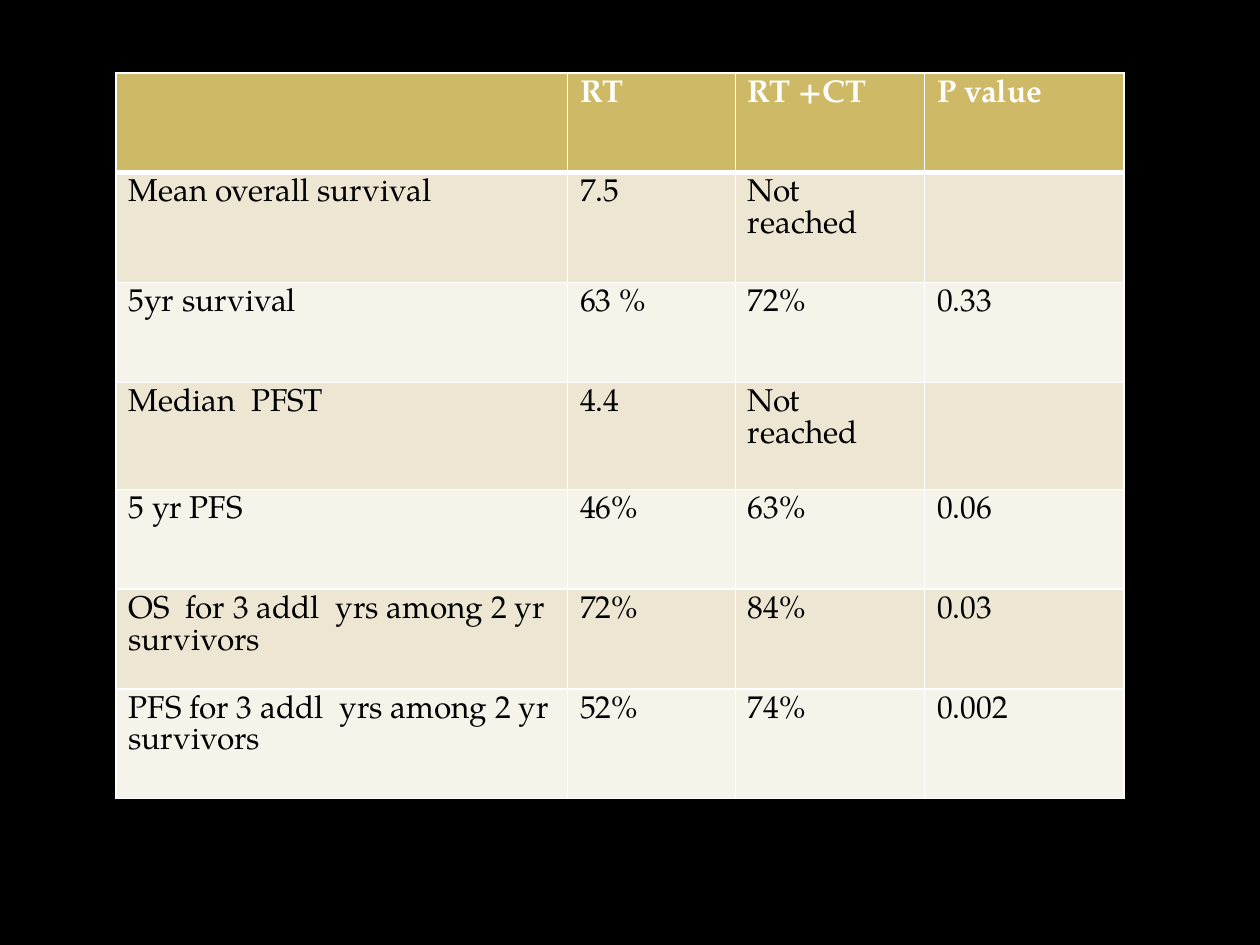
from lxml.etree import SubElement
from pptx import Presentation
from pptx.dml.color import RGBColor
from pptx.oxml.ns import qn
from pptx.util import Inches, Pt

FONT = "TeX Gyre Pagella"
WHITE, BLACK, GOLD = "FFFFFF", "000000", "CEB966"
BANDS = ("EDE6D3", "F6F3EA")
SLIDE_W, SLIDE_H = 10, 7.5
TABLE_BOX = (0.92, 0.58, 8, 5.76)
COLS = (3.58, 1.33, 1.5, 1.58)
ROWS = (0.79, 0.87, 0.79, 0.85, 0.79, 0.79, 0.87)
RESULTS = (
    ("", "RT", "RT +CT", "P value"),
    ("Mean overall survival", "7.5", "Not reached", ""),
    ("5yr survival", "63 %", "72%", "0.33"),
    ("Median  PFST", "4.4", "Not reached", ""),
    ("5 yr PFS", "46%", "63%", "0.06"),
    ("OS  for 3 addl  yrs among 2 yr survivors", "72%", "84%", "0.03"),
    ("PFS for 3 addl  yrs among 2 yr survivors", "52%", "74%", "0.002"),
)


def rgb(value):
    """Turn a hex string into a colour."""
    return RGBColor.from_string(value)


def paint(fill, color):
    """Make a fill solid in one colour."""
    fill.solid()
    fill.fore_color.rgb = rgb(color)


def set_borders(cell, widths):
    """Draw white borders with the given width in points for each side."""
    props = cell._tc.get_or_add_tcPr()
    for i, (side, width) in enumerate(widths.items()):
        ln = SubElement(props, qn(f"a:ln{side}"), w=str(Pt(width)))
        SubElement(SubElement(ln, qn("a:solidFill")), qn("a:srgbClr"), val=WHITE)
        props.insert(i, ln)


def write_cell(cell, text, color, bold):
    """Put styled text into a cell."""
    if not text:
        return
    r = cell.text_frame.paragraphs[0].add_run()
    r.text = text
    for name, value in {"name": FONT, "size": Pt(18), "bold": bold}.items():
        setattr(r.font, name, value)
    r.font.color.rgb = rgb(color)


def add_results_table(s, box, rows):
    """Place the survival table with a gold header and banded rows."""
    left, top, width, height = box
    frame = s.shapes.add_table(len(rows), len(COLS), *map(Inches, box))
    table = frame.table
    for col, share in zip(table.columns, COLS):
        col.width = Inches(width * share / sum(COLS))
    for row, share in zip(table.rows, ROWS):
        row.height = Inches(height * share / sum(ROWS))
    for i, texts in enumerate(rows):
        header = i == 0
        widths = {"L": 1, "R": 1, "T": 3 if i == 1 else 1, "B": 3 if header else 1}
        for j, text in enumerate(texts):
            cell = table.cell(i, j)
            paint(cell.fill, GOLD if header else BANDS[(i - 1) % 2])
            set_borders(cell, widths)
            write_cell(cell, text, WHITE if header else BLACK, header)


def main():
    """Build and save the slide."""
    prs = Presentation()
    prs.slide_width, prs.slide_height = Inches(SLIDE_W), Inches(SLIDE_H)
    s = prs.slides.add_slide(prs.slide_layouts[6])
    paint(s.background.fill, BLACK)
    add_results_table(s, TABLE_BOX, RESULTS)
    prs.save("out.pptx")


if __name__ == "__main__":
    main()
